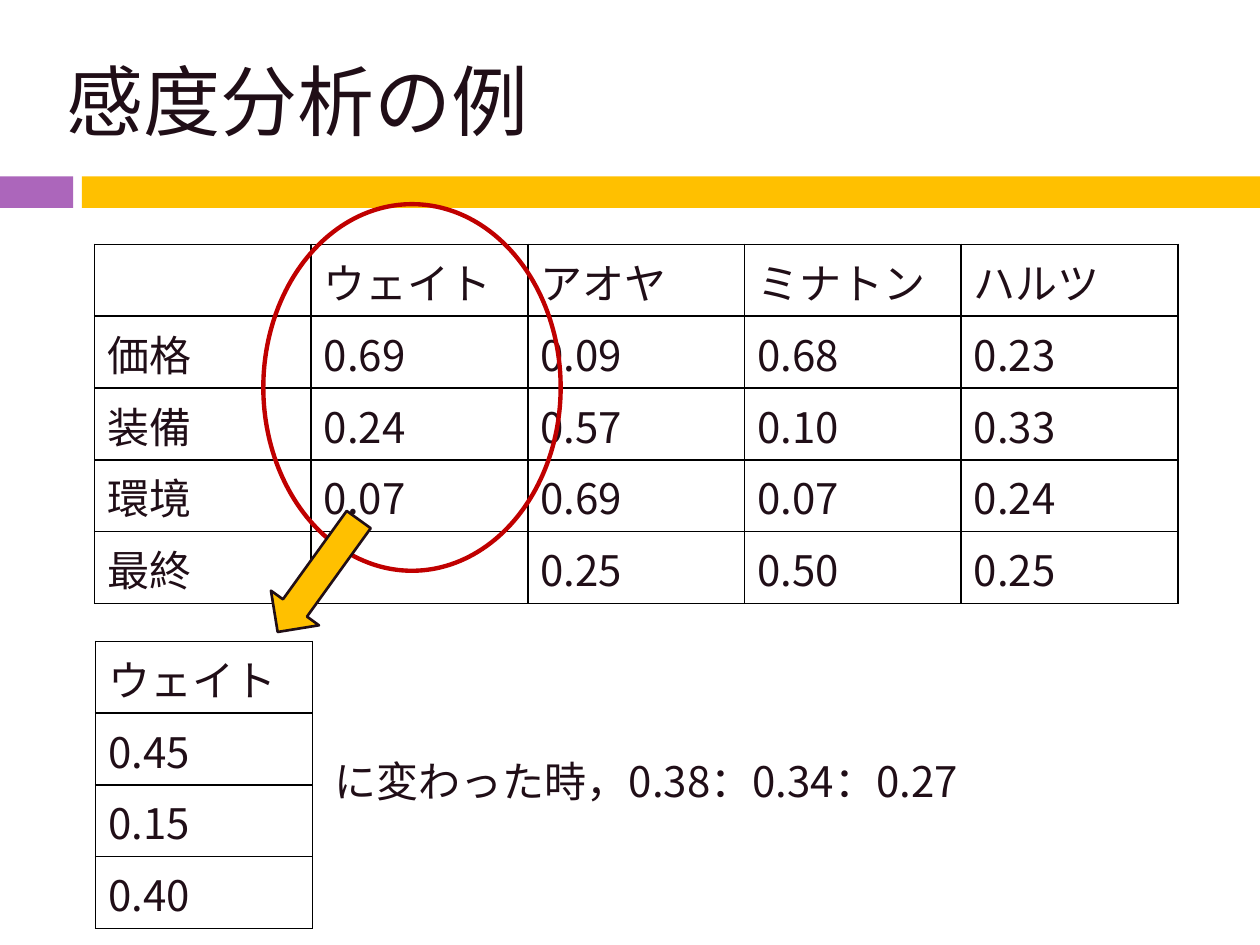
"""Build a slide showing a sensitivity analysis of decision weights."""
from lxml.etree import SubElement
from pptx import Presentation
from pptx.dml.color import RGBColor
from pptx.enum.shapes import MSO_SHAPE as Shape
from pptx.enum.text import MSO_ANCHOR as Anchor, MSO_AUTO_SIZE as AutoSize
from pptx.oxml import parse_xml
from pptx.oxml.ns import nsdecls, qn
from pptx.util import Inches, Pt

FONT = "Noto Sans CJK JP"
COLORS = {"text": "200E17", "purple": "AC66BB", "gold": "FFC000", "red": "C00000", "border": "000000"}
COLUMN_WIDTH, ROW_HEIGHT = 1.72, 0.57


def write_text(frame, text, size=24, color="text", anchor=Anchor.MIDDLE):
    frame.word_wrap = True
    frame.vertical_anchor = anchor
    run = frame.paragraphs[0].add_run()
    run.text = text
    run.font.size = Pt(size)
    run.font.color.rgb = RGBColor.from_string(COLORS[color])
    run.font.name = FONT
    SubElement(run.font._element, qn("a:ea"), typeface=FONT)


def add_grid(slide, rows, left, top):
    columns = len(rows[0])
    table = slide.shapes.add_table(
        len(rows), columns, Inches(left), Inches(top),
        Inches(COLUMN_WIDTH * columns), Inches(ROW_HEIGHT * len(rows)),
    ).table
    table.first_row = table.horz_banding = False
    for column in table.columns:
        column.width = Inches(COLUMN_WIDTH)
    for row, values in zip(table.rows, rows):
        row.height = Inches(ROW_HEIGHT)
        for cell, value in zip(row.cells, values):
            properties = cell._tc.get_or_add_tcPr()
            for side in ("lnL", "lnR", "lnT", "lnB"):
                properties.append(parse_xml(
                    f'<a:{side} {nsdecls("a")} w="{Pt(1)}"><a:solidFill>'
                    f'<a:srgbClr val="{COLORS["border"]}"/></a:solidFill></a:{side}>'
                ))
            cell.fill.background()
            cell.vertical_anchor = Anchor.MIDDLE
            if value:
                write_text(cell.text_frame, value)


presentation = Presentation()
presentation.slide_width, presentation.slide_height = Inches(10), Inches(7.5)
slide = presentation.slides.add_slide(presentation.slide_layouts[6])

for left, width, color in [(0, 0.58, "purple"), (0.65, 9.35, "gold")]:
    bar = slide.shapes.add_shape(Shape.RECTANGLE, Inches(left), Inches(1.4), Inches(width), Inches(0.25))
    bar.shadow.inherit = False
    bar.fill.solid()
    bar.fill.fore_color.rgb = RGBColor.from_string(COLORS[color])
    bar.line.fill.background()

title = slide.shapes.add_textbox(Inches(0.43), Inches(0.25), Inches(9.15), Inches(1.08))
write_text(title.text_frame, "感度分析の例", size=44)

add_grid(slide, [
    ["", "ウェイト", "アオヤ", "ミナトン", "ハルツ"],
    ["価格", "0.69", "0.09", "0.68", "0.23"],
    ["装備", "0.24", "0.57", "0.10", "0.33"],
    ["環境", "0.07", "0.69", "0.07", "0.24"],
    ["最終", "", "0.25", "0.50", "0.25"],
], left=0.75, top=1.94)

highlight = slide.shapes.add_shape(Shape.OVAL, Inches(2.09), Inches(1.62), Inches(2.36), Inches(2.91))
highlight.shadow.inherit = False
highlight.fill.background()
highlight.line.color.rgb = RGBColor.from_string(COLORS["red"])
highlight.line.width = Pt(2.5)

add_grid(slide, [["ウェイト"], ["0.45"], ["0.15"], ["0.40"]], left=0.76, top=5.09)

result = slide.shapes.add_textbox(Inches(2.56), Inches(5.95), Inches(6.06), Inches(0.5))
write_text(result.text_frame, "に変わった時，0.38：0.34：0.27", anchor=Anchor.TOP)
result.text_frame.auto_size = AutoSize.SHAPE_TO_FIT_TEXT

arrow = slide.shapes.add_shape(Shape.DOWN_ARROW, Inches(2.29), Inches(4.02), Inches(0.47), Inches(1.1))
arrow.shadow.inherit = False
arrow.rotation = 35.8
arrow.fill.solid()
arrow.fill.fore_color.rgb = RGBColor.from_string(COLORS["gold"])
arrow.line.color.rgb = RGBColor.from_string(COLORS["text"])
arrow.line.width = Pt(1.5)

presentation.save("out.pptx")
